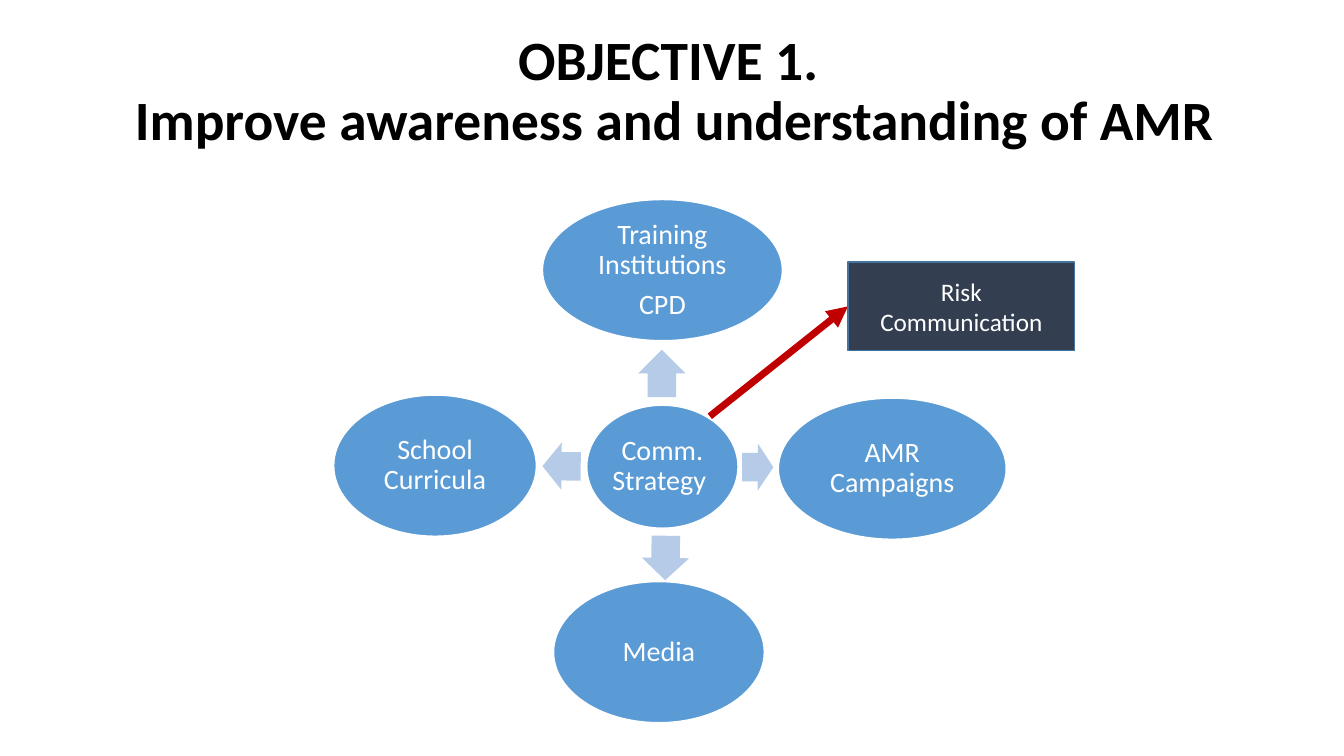
from lxml import etree
from pptx import Presentation
from pptx.dml.color import RGBColor
from pptx.enum import shapes, text
from pptx.oxml.ns import qn
from pptx.util import Inches, Pt

BLUE, PALE, NAVY, EDGE = "5B9BD5", "B5CBE7", "333F50", "43739E"
RED, WHITE, BLACK = "C00000", "FFFFFF", "000000"

# Text, left, top, width, height
OVALS = [
    ("Comm. Strategy ", 5.82, 4.02, 1.5, 1.22),
    ("Training Institutions\nCPD", 5.38, 1.98, 2.38, 1.4),
    ("AMR Campaigns", 7.72, 3.95, 2.26, 1.4),
    ("Media", 5.49, 5.77, 2.09, 1.4),
    ("School Curricula", 3.31, 3.92, 2.01, 1.4),
]
# Left, top, length, rotation
BLOCK_ARROWS = [
    (6.33, 3.47, 0.47, 270),
    (7.36, 4.4, 0.31, 0.4),
    (6.38, 5.3, 0.44, 90.9),
    (5.38, 4.39, 0.38, 180.4),
]


def rgb(value):
    return RGBColor.from_string(value)


def write(sp, words, size, color, bold=False, spacing=1.0, after=0, inset=None):
    tf = sp.text_frame
    tf.word_wrap = True
    tf.vertical_anchor = text.MSO_ANCHOR.MIDDLE
    if inset is not None:
        tf.margin_left = tf.margin_right = Inches(inset)
        tf.margin_top = tf.margin_bottom = Inches(inset)
    tf.text = words
    for p in tf.paragraphs:
        p.alignment = text.PP_ALIGN.CENTER
        p.line_spacing = spacing
        p.space_after = Pt(after)
        for r in p.runs:
            r.font.name = "Calibri"
            r.font.size = Pt(size)
            r.font.bold = bold
            r.font.color.rgb = rgb(color)


def add_block(s, kind, left, top, width, height, fill, line=None):
    sp = s.shapes.add_shape(kind, Inches(left), Inches(top),
                            Inches(width), Inches(height))
    sp.shadow.inherit = False
    sp.fill.solid()
    sp.fill.fore_color.rgb = rgb(fill)
    if line:
        sp.line.color.rgb = rgb(line)
        sp.line.width = Pt(1)
    else:
        sp.line.fill.background()
    return sp


def add_oval(s, words, left, top, width, height):
    sp = add_block(s, shapes.MSO_SHAPE.OVAL, left, top, width, height, BLUE, WHITE)
    write(sp, words, 20, WHITE, spacing=0.9, after=7, inset=0.03)


def add_block_arrow(s, left, top, length, rotation):
    sp = add_block(s, shapes.MSO_SHAPE.RIGHT_ARROW, left, top, length, 0.47, PALE)
    sp.adjustments[0], sp.adjustments[1] = 0.6, 0.5
    sp.rotation = rotation


def add_line_arrow(s, x1, y1, x2, y2, color, width):
    line = s.shapes.add_connector(shapes.MSO_CONNECTOR.STRAIGHT, Inches(x1),
                                  Inches(y1), Inches(x2), Inches(y2))
    line.line.color.rgb = rgb(color)
    line.line.width = Pt(width)
    etree.SubElement(line.line._get_or_add_ln(), qn("a:tailEnd"), type="triangle")
    etree.SubElement(line._element.spPr, qn("a:effectLst"))


def add_title(s, words):
    sp = s.shapes.add_textbox(Inches(0.62), Inches(0.29), Inches(12.14), Inches(1.25))
    write(sp, words, 39.6, BLACK, bold=True, spacing=0.9)


def main():
    prs = Presentation()
    prs.slide_width, prs.slide_height = Inches(13.33), Inches(7.5)
    s = prs.slides.add_slide(prs.slide_layouts[6])

    add_title(s, "OBJECTIVE 1. \vImprove awareness and understanding of AMR")

    # Hub and its four channels
    for oval in OVALS:
        add_oval(s, *oval)
    for arrow in BLOCK_ARROWS:
        add_block_arrow(s, *arrow)

    # Link to risk communication
    add_line_arrow(s, 7.04, 4.13, 8.41, 3.04, RED, 5)
    risk = add_block(s, shapes.MSO_SHAPE.RECTANGLE, 8.41, 2.6, 2.25, 0.88, NAVY, EDGE)
    write(risk, "Risk Communication", 18, WHITE)

    prs.save("out.pptx")


if __name__ == "__main__":
    main()
